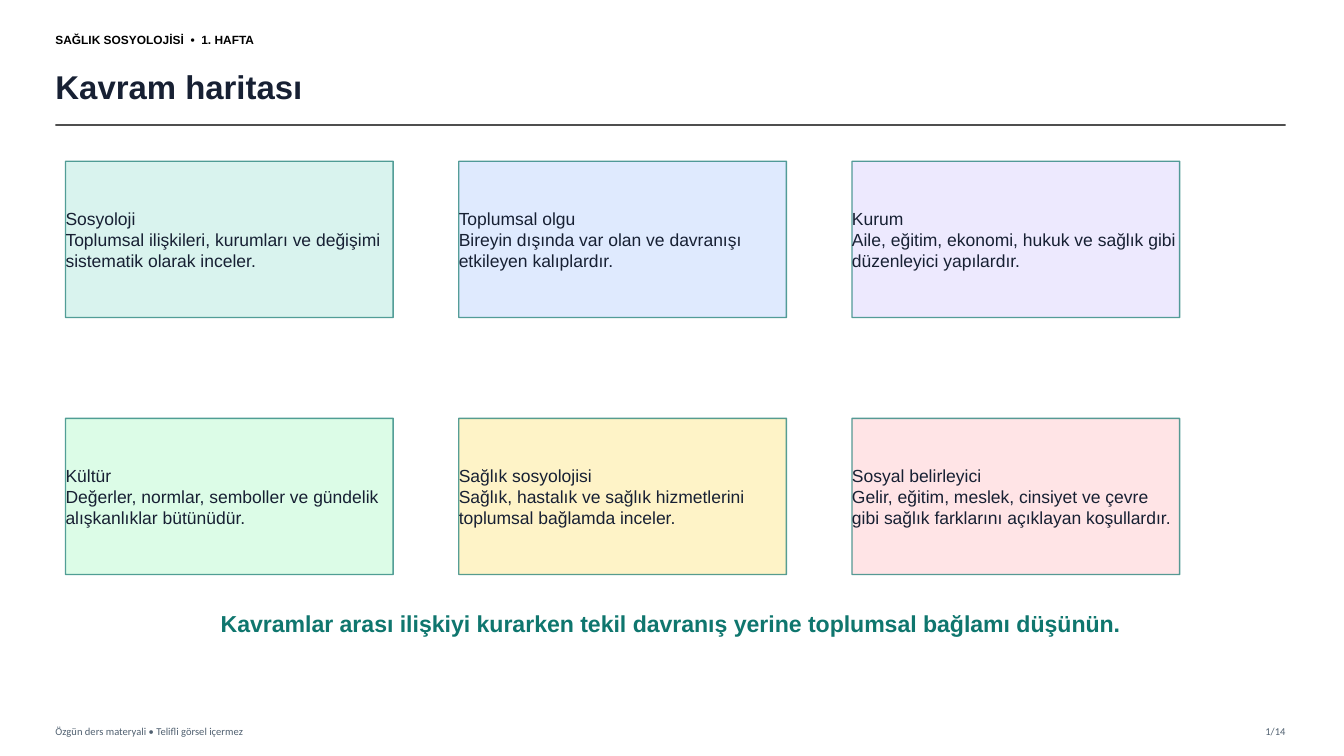
from lxml import etree
from pptx import Presentation
from pptx.dml.color import RGBColor
from pptx.enum.shapes import MSO_CONNECTOR as Line, MSO_SHAPE as Shape
from pptx.enum.text import MSO_ANCHOR as Anchor, PP_ALIGN as Align
from pptx.oxml.ns import qn
from pptx.util import Inches, Pt

INK, TEAL, GREY = "172033", "0F766E", "506070"

# text, (left, top, width, height), font, size, colour, bold, align, anchor
LABELS = [
    ("SAĞLIK SOSYOLOJİSİ  •  1. HAFTA", (0.55, 0.25, 3.6, 0.28),
     "Arial", 8.5, "000000", True, Align.LEFT, Anchor.MIDDLE),
    ("Kavram haritası", (0.55, 0.58, 11.95, 0.55),
     "Arial", 23.5, INK, True, Align.LEFT, Anchor.MIDDLE),
    ("Özgün ders materyali • Telifli görsel içermez", (0.55, 7.14, 6, 0.22),
     "Calibri", 7.5, GREY, False, Align.LEFT, Anchor.MIDDLE),
    ("1/14", (12.1, 7.14, 0.65, 0.22),
     "Calibri", 7.5, GREY, False, Align.RIGHT, Anchor.MIDDLE),
    ("Kavramlar arası ilişkiyi kurarken tekil davranış yerine toplumsal bağlamı düşünün.",
     (1, 6.05, 11.3, 0.45), "Arial", 16.5, TEAL, True, Align.CENTER, Anchor.TOP),
]
CARDS = [
    ("Sosyoloji", "Toplumsal ilişkileri, kurumları ve değişimi sistematik olarak inceler.", "D9F3EE"),
    ("Toplumsal olgu", "Bireyin dışında var olan ve davranışı etkileyen kalıplardır.", "DFEAFE"),
    ("Kurum", "Aile, eğitim, ekonomi, hukuk ve sağlık gibi düzenleyici yapılardır.", "EDE9FE"),
    ("Kültür", "Değerler, normlar, semboller ve gündelik alışkanlıklar bütünüdür.", "DCFCE7"),
    ("Sağlık sosyolojisi", "Sağlık, hastalık ve sağlık hizmetlerini toplumsal bağlamda inceler.", "FEF3C7"),
    ("Sosyal belirleyici",
     "Gelir, eğitim, meslek, cinsiyet ve çevre gibi sağlık farklarını açıklayan koşullardır.", "FFE4E6"),
]
COLS, LEFT, TOP = 3, 0.65, 1.6
STEP_X, STEP_Y = 3.9, 2.55
CARD_W, CARD_H = 3.25, 1.55


def paint(color, code):
    color.rgb = RGBColor.from_string(code)


def stroke(line, code, width, alpha):
    """Style a line; alpha is its opacity in percent."""
    line.width = Pt(width)
    line.fill.solid()
    paint(line.color, code)
    tone = line.fill._xPr.find(".//" + qn("a:srgbClr"))
    etree.SubElement(tone, qn("a:alpha")).set("val", str(alpha * 1000))


def write(shape, lines, font, size, code, bold, align, anchor):
    frame = shape.text_frame
    frame.word_wrap = True
    frame.vertical_anchor = anchor
    frame.margin_left = frame.margin_right = 0
    frame.margin_top = frame.margin_bottom = 0
    frame.text = "\n".join(lines)
    for para in frame.paragraphs:
        para.alignment = align
        para.font.name = font
        para.font.size = Pt(size)
        para.font.bold = bold
        paint(para.font.color, code)


def main():
    deck = Presentation()
    deck.slide_width, deck.slide_height = Inches(13.33), Inches(7.5)
    slide = deck.slides.add_slide(deck.slide_layouts[6])
    shapes = slide.shapes

    for text, box, *style in LABELS:
        write(shapes.add_textbox(*map(Inches, box)), [text], *style)

    rule = shapes.add_connector(Line.STRAIGHT, *map(Inches, (0.55, 1.24, 12.75, 1.24)))
    stroke(rule.line, "333333", 1.2, 85)
    etree.SubElement(rule._element.spPr, qn("a:effectLst"))

    for i, (term, note, fill) in enumerate(CARDS):
        row, col = divmod(i, COLS)
        box = (LEFT + col * STEP_X, TOP + row * STEP_Y, CARD_W, CARD_H)
        card = shapes.add_shape(Shape.RECTANGLE, *map(Inches, box))
        card.fill.solid()
        paint(card.fill.fore_color, fill)
        stroke(card.line, TEAL, 1, 70)
        card.shadow.inherit = False
        write(card, [term, note], "Arial", 12.5, INK, False, Align.LEFT, Anchor.MIDDLE)

    deck.save("out.pptx")


if __name__ == "__main__":
    main()
